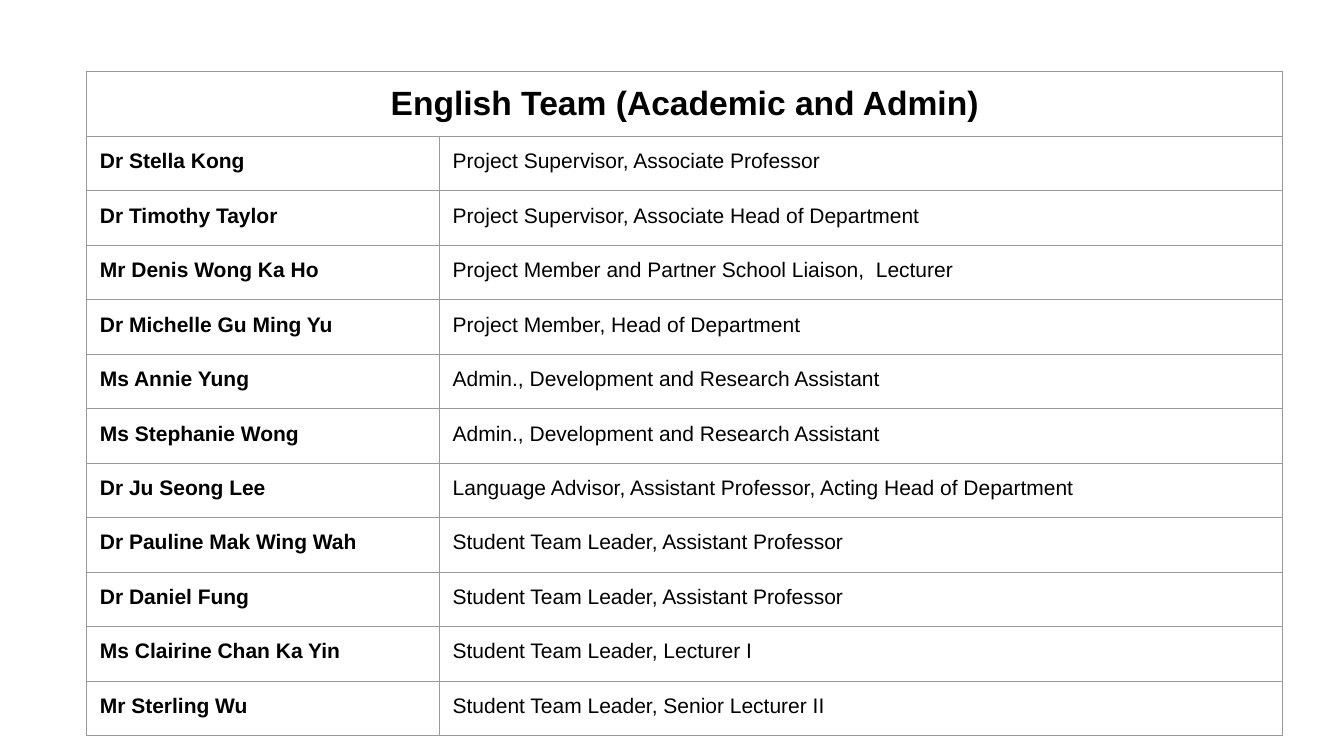
from dataclasses import dataclass

from lxml import etree
from pptx import Presentation
from pptx.dml.color import RGBColor
from pptx.enum.text import MSO_ANCHOR, PP_ALIGN
from pptx.oxml.ns import qn
from pptx.util import Pt

TOP = MSO_ANCHOR.TOP
LEFT, CENTER = PP_ALIGN.LEFT, PP_ALIGN.CENTER
BLANK_LAYOUT = 6
BORDER_SIDES = ("a:lnL", "a:lnR", "a:lnT", "a:lnB")


@dataclass(frozen=True)
class Theme:
    font: str = "Arial"
    ink: str = "000000"
    rule: str = "999999"
    rule_width: float = 0.75
    heading_size: float = 24
    body_size: float = 15
    inset: float = 9.6


TEAM_HEADING = "English Team (Academic and Admin)"
TEAM = [
    ("Dr Stella Kong", "Project Supervisor, Associate Professor"),
    ("Dr Timothy Taylor", "Project Supervisor, Associate Head of Department"),
    ("Mr Denis Wong Ka Ho", "Project Member and Partner School Liaison,  Lecturer"),
    ("Dr Michelle Gu Ming Yu", "Project Member, Head of Department"),
    ("Ms Annie Yung", "Admin., Development and Research Assistant"),
    ("Ms Stephanie Wong", "Admin., Development and Research Assistant"),
    ("Dr Ju Seong Lee", "Language Advisor, Assistant Professor, Acting Head of Department"),
    ("Dr Pauline Mak Wing Wah", "Student Team Leader, Assistant Professor"),
    ("Dr Daniel Fung", "Student Team Leader, Assistant Professor"),
    ("Ms Clairine Chan Ka Yin", "Student Team Leader, Lecturer I"),
    ("Mr Sterling Wu", "Student Team Leader, Senior Lecturer II"),
]


class SlideBuilder:
    def __init__(self, slide, theme):
        self.slide = slide
        self.theme = theme

    def apply(self, target, formats):
        for attribute, value in formats.items():
            setattr(target, attribute, value)

    def borders(self, cell):
        properties = cell._tc.get_or_add_tcPr()
        for position, side in enumerate(BORDER_SIDES):
            border = etree.Element(qn(side), w=str(Pt(self.theme.rule_width)))
            fill = etree.SubElement(border, qn("a:solidFill"))
            etree.SubElement(fill, qn("a:srgbClr"), val=self.theme.rule)
            properties.insert(position, border)

    def cell(self, cell, text, size, bold, alignment=LEFT):
        inset = Pt(self.theme.inset)
        self.apply(cell, {
            "margin_left": inset, "margin_right": inset,
            "margin_top": inset, "margin_bottom": inset,
            "vertical_anchor": TOP, "text": text,
        })
        paragraph = cell.text_frame.paragraphs[0]
        paragraph.alignment = alignment
        font = paragraph.runs[0].font
        self.apply(font, {"name": self.theme.font, "size": Pt(size), "bold": bold})
        font.color.rgb = RGBColor.from_string(self.theme.ink)

    def roster(self, heading, members, left, top, widths, heading_height, row_height):
        heights = [heading_height] + [row_height] * len(members)
        table = self.slide.shapes.add_table(
            len(heights), len(widths), Pt(left), Pt(top), Pt(sum(widths)), Pt(sum(heights))
        ).table
        self.apply(table, {"first_row": False, "horz_banding": False})
        for column, width in zip(table.columns, widths):
            column.width = Pt(width)
        for row, height in zip(table.rows, heights):
            row.height = Pt(height)
        for cell in table.iter_cells():
            cell.fill.background()
            self.borders(cell)

        title_cell = table.cell(0, 0)
        title_cell.merge(table.cell(0, len(widths) - 1))
        self.cell(title_cell, heading, self.theme.heading_size, True, CENTER)
        for row, (name, role) in enumerate(members, start=1):
            self.cell(table.cell(row, 0), name, self.theme.body_size, True)
            self.cell(table.cell(row, 1), role, self.theme.body_size, False)


def main():
    presentation = Presentation()
    presentation.slide_width = Pt(960)
    presentation.slide_height = Pt(540)
    slide = presentation.slides.add_slide(presentation.slide_layouts[BLANK_LAYOUT])
    builder = SlideBuilder(slide, Theme())
    builder.roster(TEAM_HEADING, TEAM, left=61.8, top=51, widths=(252, 602.6),
                   heading_height=46.5, row_height=38.9)
    presentation.save("out.pptx")


if __name__ == "__main__":
    main()
